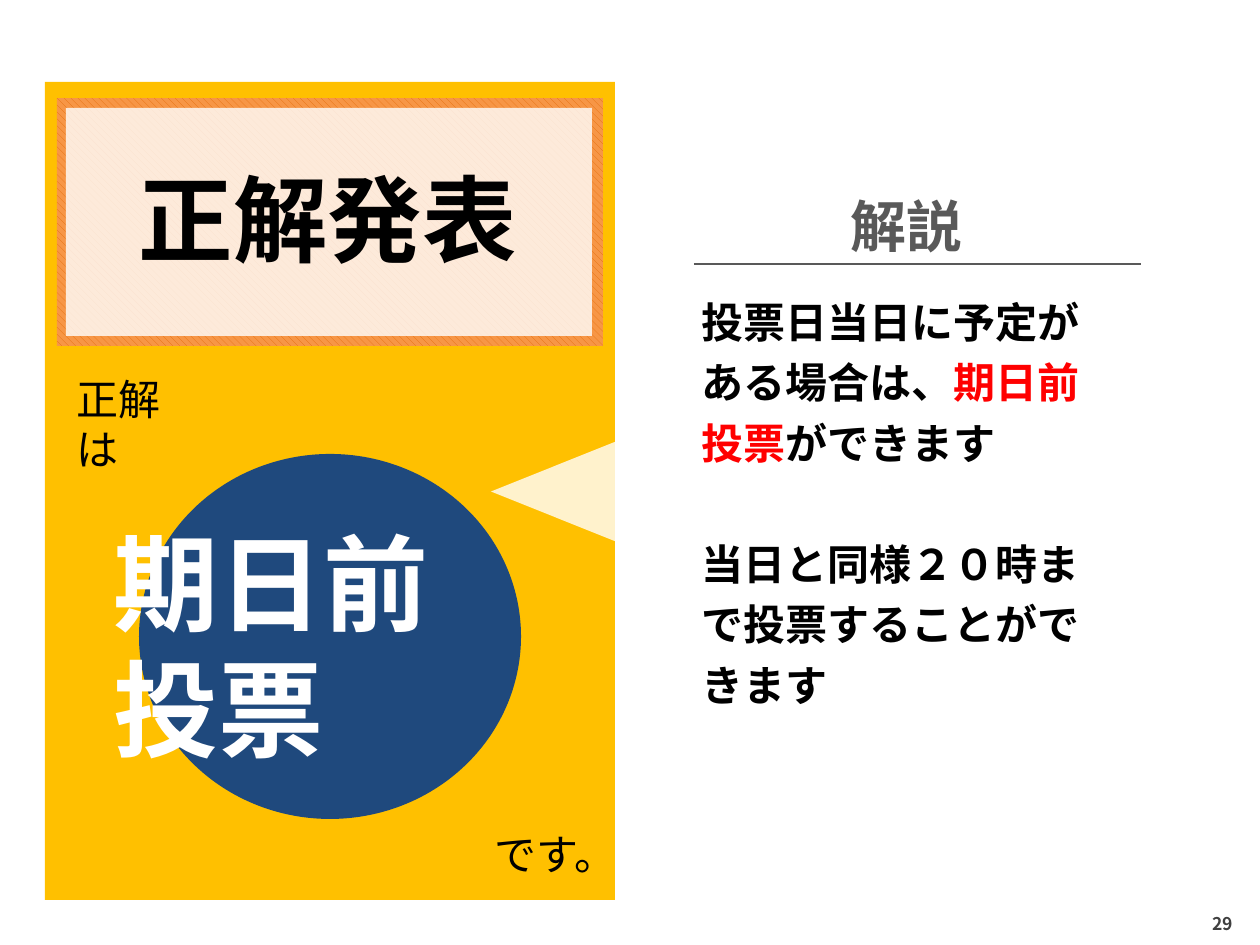
from lxml.etree import SubElement
from pptx import Presentation
from pptx.dml.color import RGBColor
from pptx.enum.dml import MSO_PATTERN
from pptx.enum.shapes import MSO_CONNECTOR, MSO_SHAPE
from pptx.enum.text import MSO_ANCHOR, MSO_AUTO_SIZE, PP_ALIGN
from pptx.oxml.ns import qn
from pptx.util import Emu, Pt

SCALE = 914400 / 126
FONT = "Noto Sans CJK JP"
COLORS = {
    "panel": "FFC000", "stripe": "E46C0A", "frame": "F79646", "navy": "1F497D",
    "white": "FFFFFF", "black": "000000", "red": "FF0000", "gray": "595959",
    "number": "404040",
}


def px(length):
    return Emu(round(length * SCALE))


def color(name):
    return RGBColor.from_string(COLORS[name])


class QuizSlide:
    """Holds the style and the current slide, and draws each kind of element."""

    def __init__(self, slide):
        self.slide = slide
        self.shapes = slide.shapes

    def shape(self, kind, box, fill, opacity=None, rotation=0):
        shape = self.shapes.add_shape(kind, *map(px, box))
        shape.shadow.inherit = False
        shape.rotation = rotation
        shape.line.fill.background()
        shape.fill.solid()
        shape.fill.fore_color.rgb = color(fill)
        if opacity is not None:
            srgb = shape._element.spPr.find(qn("a:solidFill"))[0]
            SubElement(srgb, qn("a:alpha")).set("val", str(opacity * 1000))
        return shape

    def striped(self, box, front, back):
        shape = self.shape(MSO_SHAPE.RECTANGLE, box, back)
        shape.fill.patterned()
        shape.fill.pattern = MSO_PATTERN.WIDE_DOWNWARD_DIAGONAL
        shape.fill.fore_color.rgb = color(front)
        shape.fill.back_color.rgb = color(back)

    def line(self, start, end, stroke, width):
        line = self.shapes.add_connector(
            MSO_CONNECTOR.STRAIGHT, *map(px, (*start, *end)))
        line.line.color.rgb = color(stroke)
        line.line.width = Pt(width)
        SubElement(line._element.spPr, qn("a:effectLst"))

    def fill_text(self, holder, paragraphs, size, bold=False,
                  align=PP_ALIGN.LEFT, wrap=True, anchor=MSO_ANCHOR.TOP,
                  spacing=1.0, gap=0):
        frame = holder.text_frame
        frame.word_wrap = wrap
        frame.auto_size = MSO_AUTO_SIZE.NONE
        frame.vertical_anchor = anchor
        for index, runs in enumerate(paragraphs):
            paragraph = frame.add_paragraph() if index else frame.paragraphs[0]
            paragraph.alignment = align
            paragraph.line_spacing = spacing
            paragraph.space_before = Pt(gap if index else 0)
            for words, tint in runs:
                run = paragraph.add_run()
                run.text = words
                run.font.size = Pt(size)
                run.font.bold = bold
                run.font.name = FONT
                run.font.color.rgb = color(tint)
                SubElement(run.font._element, qn("a:ea")).set("typeface", FONT)

    def text(self, box, paragraphs, size, **style):
        holder = self.shapes.add_textbox(*map(px, box))
        self.fill_text(holder, paragraphs, size, **style)

    def placeholder(self, index, box, paragraphs, size, **style):
        holder = self.slide.placeholders[index]
        holder.left, holder.top, holder.width, holder.height = map(px, box)
        self.shapes._spTree.append(holder._element)
        self.fill_text(holder, paragraphs, size, **style)
        for paragraph in holder.text_frame.paragraphs:
            properties = paragraph._p.get_or_add_pPr()
            properties.set("marL", "0")
            properties.set("indent", "0")
            SubElement(properties, qn("a:buNone"))


def main():
    deck = Presentation()
    deck.slide_width, deck.slide_height = px(1260), px(945)
    quiz = QuizSlide(deck.slides.add_slide(deck.slide_layouts[1]))

    quiz.shape(MSO_SHAPE.RECTANGLE, (45, 82, 570, 818), "panel")
    quiz.striped((57, 98, 546, 248), "stripe", "frame")
    quiz.shape(MSO_SHAPE.RECTANGLE, (66, 108, 526, 228), "white", opacity=80)
    quiz.shape(MSO_SHAPE.ISOSCELES_TRIANGLE, (507, 411, 129, 161), "white",
               opacity=80, rotation=270)

    quiz.text((1186, 901, 74, 44), [[("29", "number")]], 10, bold=True,
              align=PP_ALIGN.CENTER, anchor=MSO_ANCHOR.MIDDLE)
    quiz.placeholder(0, (124, 155, 407, 127), [[("正解発表", "black")]], 54,
                     bold=True, align=PP_ALIGN.CENTER, wrap=False)
    quiz.text((64, 367, 146, 113), [[("正解は", "black")]], 24)
    quiz.text((482, 822, 125, 63), [[("です。", "black")]], 24, wrap=False)

    quiz.text((838, 185, 138, 81), [[("解説", "gray")]], 32, bold=True,
              align=PP_ALIGN.CENTER, wrap=False)
    quiz.line((694, 264), (1141, 264), "gray", 0.75)
    explanation = [
        [("投票日当日に予定がある場合は、", "black"), ("期日前投票", "red"),
         ("ができます", "black")],
        [("当日と同様２０時まで投票することができます", "black")],
    ]
    quiz.placeholder(1, (689, 280, 445, 430), explanation, 24, bold=True,
                     spacing=1.2, gap=34.6)

    quiz.shape(MSO_SHAPE.OVAL, (139, 454, 382, 365), "navy")
    quiz.text((101, 512, 460, 267),
              [[("期日前", "white")], [("投票", "white")]], 60, bold=True,
              align=PP_ALIGN.JUSTIFY)

    deck.save("out.pptx")


if __name__ == "__main__":
    main()
